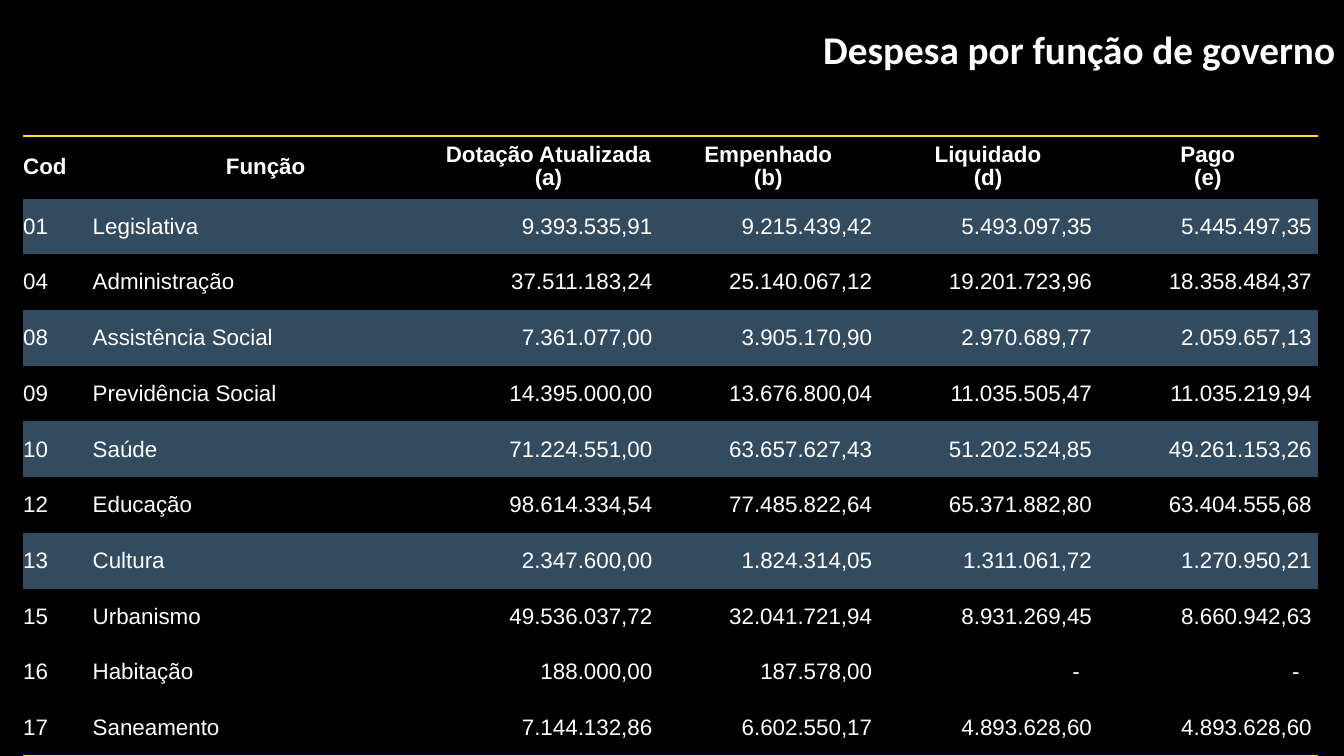
"""Build the slide with the table of expenditure by government function."""
from lxml.etree import SubElement
from pptx import Presentation
from pptx.dml.color import RGBColor
from pptx.enum.text import MSO_ANCHOR, PP_ALIGN
from pptx.oxml.ns import qn
from pptx.util import Inches, Pt

THEME = {
    "back": RGBColor.from_string("000000"),
    "text": RGBColor.from_string("FFFFFF"),
    "band": RGBColor.from_string("324B5F"),
    "rule": "F4DE3A",
    "title": {"name": "Calibri", "size": Pt(28), "bold": True},
    "head": {"name": "Arial", "size": Pt(16), "bold": True},
    "body": {"name": "Arial", "size": Pt(16), "bold": False},
}
PLAIN_STYLE = "{2D5ABB26-0587-4C30-8999-92F81FD0307C}"
HEADER = ["Cod", "Função", "Dotação Atualizada\n(a)", "Empenhado\n(b)", "Liquidado\n(d)", "Pago\n(e)"]
EXPENSES = [
    ["01", "Legislativa", "9.393.535,91", "9.215.439,42", "5.493.097,35", "5.445.497,35"],
    ["04", "Administração", "37.511.183,24", "25.140.067,12", "19.201.723,96", "18.358.484,37"],
    ["08", "Assistência Social", "7.361.077,00", "3.905.170,90", "2.970.689,77", "2.059.657,13"],
    ["09", "Previdência Social", "14.395.000,00", "13.676.800,04", "11.035.505,47", "11.035.219,94"],
    ["10", "Saúde", "71.224.551,00", "63.657.627,43", "51.202.524,85", "49.261.153,26"],
    ["12", "Educação", "98.614.334,54", "77.485.822,64", "65.371.882,80", "63.404.555,68"],
    ["13", "Cultura", "2.347.600,00", "1.824.314,05", "1.311.061,72", "1.270.950,21"],
    ["15", "Urbanismo", "49.536.037,72", "32.041.721,94", "8.931.269,45", "8.660.942,63"],
    ["16", "Habitação", "188.000,00", "187.578,00", "-", "-"],
    ["17", "Saneamento", "7.144.132,86", "6.602.550,17", "4.893.628,60", "4.893.628,60"],
]
BANDED = {"01", "08", "10", "13"}


def set_text(tf, text, font, align, spacing=None):
    tf.text = text
    for p in tf.paragraphs:
        p.alignment = align
        p.line_spacing = spacing
        for r in p.runs:
            for key, value in font.items():
                setattr(r.font, key, value)
            r.font.color.rgb = THEME["text"]


def add_rule(cell, side):
    ln = SubElement(cell._tc.get_or_add_tcPr(), qn(f"a:{side}"), w=str(Pt(1)))
    fill = SubElement(ln, qn("a:solidFill"))
    SubElement(fill, qn("a:srgbClr"), val=THEME["rule"])


prs = Presentation()
prs.slide_width, prs.slide_height = Inches(13.33), Inches(7.5)
s = prs.slides.add_slide(prs.slide_layouts[5])
s.background.fill.solid()
s.background.fill.fore_color.rgb = THEME["back"]

title = s.shapes.title
title.left, title.top, title.width, title.height = Inches(4.91), Inches(0.2), Inches(8.43), Inches(0.57)
set_text(title.text_frame, "Despesa por função de governo", THEME["title"], PP_ALIGN.RIGHT)

rows = [HEADER, *EXPENSES]
left, top, head_height = Inches(0.23), Inches(1.35), Inches(0.62)
widths = [Inches(0.69), Inches(3.43)] + [Inches(2.18)] * 4
height = prs.slide_height - top
frame = s.shapes.add_table(len(rows), len(HEADER), left, top, sum(widths), height)
table = frame.table
table._tbl.tblPr.find(qn("a:tableStyleId")).text = PLAIN_STYLE
table.horz_banding = False
for column, width in zip(table.columns, widths):
    column.width = width

for i, row in enumerate(rows):
    table.rows[i].height = head_height if i == 0 else (height - head_height) // len(EXPENSES)
    for j, text in enumerate(row):
        cell = table.cell(i, j)
        number = i > 0 and j > 1
        indent = 0.18 if text == "-" else 0.06
        layout = {
            "margin_left": 0, "margin_top": 0, "margin_bottom": 0,
            "margin_right": Inches(indent) if number else 0,
            "vertical_anchor": MSO_ANCHOR.MIDDLE,
        }
        for key, value in layout.items():
            setattr(cell, key, value)
        if i == 0:
            align = PP_ALIGN.CENTER if j else PP_ALIGN.LEFT
            set_text(cell.text_frame, text, THEME["head"], align, 0.93)
            add_rule(cell, "lnT")
        else:
            align = PP_ALIGN.RIGHT if number else PP_ALIGN.LEFT
            set_text(cell.text_frame, text, THEME["body"], align)
        if i == len(EXPENSES):
            add_rule(cell, "lnB")
        if row[0] in BANDED:
            cell.fill.solid()
            cell.fill.fore_color.rgb = THEME["band"]
        else:
            cell.fill.background()

prs.save("out.pptx")
